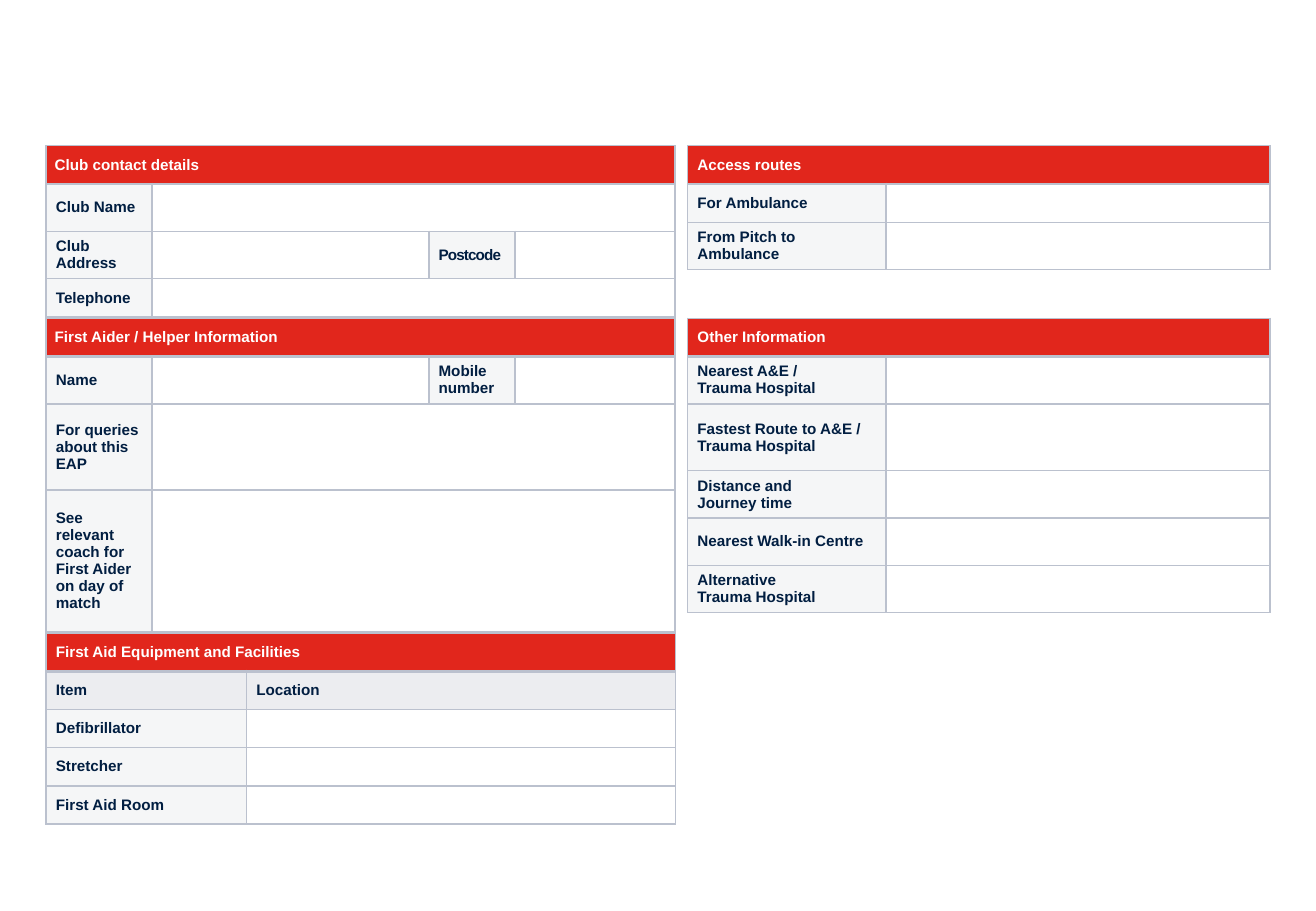
from dataclasses import dataclass

from lxml import etree
from pptx import Presentation
from pptx.dml.color import RGBColor
from pptx.enum.text import MSO_ANCHOR
from pptx.oxml.ns import qn
from pptx.util import Emu, Pt

PX = 4572  # 200 px to the inch
MIDDLE = MSO_ANCHOR.MIDDLE
FONT = "Arial"
FONT_SIZE = 9
OPACITY = 70
COLOURS = {
    "heading": "E1261C",
    "subheading": "E4E6EB",
    "label": "F1F3F5",
    "entry": "FFFFFF",
    "border": "BBC1CE",
    "heading_text": "FFFFFF",
    "text": "011E41",
}
HEADING_H, LINE_H, DOUBLE_H = 63, 63, 78
LEFT_X, RIGHT_X = 76, 1132
TOP_Y, MIDDLE_Y, BOTTOM_Y = 240, 524, 1042
CONTACT_COLUMNS = (174, 456, 142, 263)
EQUIPMENT_COLUMNS = (330, 706)
ROUTE_COLUMNS = (326, 632)


@dataclass(frozen=True)
class Field:
    """A row of labels, each followed by an entry cell; the last cell fills the row."""
    height: int
    labels: tuple[str, ...]
    is_subheading: bool = False
    tight_label: str = ""


@dataclass(frozen=True)
class Section:
    heading: str
    left: int
    top: int
    columns: tuple[int, ...]
    fields: tuple[Field, ...]
    heading_inset: tuple[int, int] = (16, 8)


SECTIONS = (
    Section("Club contact details", LEFT_X, TOP_Y, CONTACT_COLUMNS, (
        Field(DOUBLE_H, ("Club Name",)),
        Field(DOUBLE_H, ("Club Address", "Postcode"), tight_label="Postcode"),
        Field(LINE_H, ("Telephone",)),
    ), (14, 6)),
    Section("First Aider / Helper Information", LEFT_X, MIDDLE_Y, CONTACT_COLUMNS, (
        Field(DOUBLE_H, ("Name", "Mobile number")),
        Field(142, ("For queries about this EAP",)),
        Field(234, ("See relevant coach for First Aider on day of match",)),
    ), (14, 6)),
    Section("First Aid Equipment and Facilities", LEFT_X, BOTTOM_Y, EQUIPMENT_COLUMNS, (
        Field(LINE_H, ("Item", "Location"), is_subheading=True),
        Field(LINE_H, ("Defibrillator",)),
        Field(LINE_H, ("Stretcher",)),
        Field(LINE_H, ("First Aid Room",)),
    )),
    Section("Access routes", RIGHT_X, TOP_Y, ROUTE_COLUMNS, (
        Field(LINE_H, ("For Ambulance",)),
        Field(DOUBLE_H, ("From Pitch to Ambulance",)),
    )),
    Section("Other Information", RIGHT_X, MIDDLE_Y, ROUTE_COLUMNS, (
        Field(DOUBLE_H, ("Nearest A&E /\vTrauma Hospital",)),
        Field(110, ("Fastest Route to A&E /\nTrauma Hospital",)),
        Field(DOUBLE_H, ("Distance and\vJourney time",)),
        Field(DOUBLE_H, ("Nearest Walk-in Centre",)),
        Field(DOUBLE_H, ("Alternative\nTrauma Hospital",)),
    )),
)


def px(length: int) -> Emu:
    return Emu(length * PX)


def add_borders(cell, bottom_width: int = 1) -> None:
    properties = cell._tc.get_or_add_tcPr()
    for side in "LRTB":
        width = bottom_width if side == "B" else 1
        line = etree.SubElement(properties, qn(f"a:ln{side}"), w=str(Pt(width)))
        fill = etree.SubElement(line, qn("a:solidFill"))
        etree.SubElement(fill, qn("a:srgbClr"), val=COLOURS["border"])


def fill_cell(cell, role: str) -> None:
    cell.fill.solid()
    cell.fill.fore_color.rgb = RGBColor.from_string(COLOURS[role])
    if role != "heading":
        colour = cell._tc.tcPr.find(qn("a:solidFill")).find(qn("a:srgbClr"))
        etree.SubElement(colour, qn("a:alpha"), val=str(OPACITY * 1000))


def write_cell(cell, text: str, role: str, inset: tuple[int, int] = (16, 8)) -> None:
    fill_cell(cell, role)
    cell.vertical_anchor = MIDDLE
    cell.margin_left = cell.margin_right = px(inset[0])
    cell.margin_top = cell.margin_bottom = px(inset[1])
    cell.text_frame.text = text
    colour = COLOURS["heading_text" if role == "heading" else "text"]
    for paragraph in cell.text_frame.paragraphs:
        paragraph.font.name = FONT
        paragraph.font.size = Pt(FONT_SIZE)
        paragraph.font.bold = True
        paragraph.font.color.rgb = RGBColor.from_string(colour)
        if not text:
            # An empty line takes its height from its end mark.
            etree.SubElement(paragraph._p, qn("a:endParaRPr"), sz=str(FONT_SIZE * 100))


def write_field(table, row: int, field: Field) -> None:
    last = len(table.columns) - 1
    if field.is_subheading:
        for column, label in enumerate(field.labels):
            write_cell(table.cell(row, column), label, "subheading")
        return
    for index, label in enumerate(field.labels):
        column = 2 * index
        label_cell, entry = table.cell(row, column), table.cell(row, column + 1)
        write_cell(label_cell, label, "label")
        if label == field.tight_label:
            run = label_cell.text_frame.paragraphs[0].runs[0]
            run._r.get_or_add_rPr().set("spc", "-50")
        if label == field.labels[-1] and column + 1 < last:
            entry.merge(table.cell(row, last))
        write_cell(entry, "", "entry")


def add_section(slide, section: Section) -> None:
    heights = [HEADING_H] + [field.height for field in section.fields]
    table = slide.shapes.add_table(
        len(heights), len(section.columns), px(section.left), px(section.top),
        px(sum(section.columns)), px(sum(heights))).table
    table.first_row = table.horz_banding = False
    for column, width in zip(table.columns, section.columns):
        column.width = px(width)
    for index, (row, height) in enumerate(zip(table.rows, heights)):
        row.height = px(height)
        for cell in row.cells:
            add_borders(cell, 2 if index == 0 else 1)
    heading = table.cell(0, 0)
    heading.merge(table.cell(0, len(section.columns) - 1))
    write_cell(heading, section.heading, "heading", section.heading_inset)
    for row, field in enumerate(section.fields, start=1):
        write_field(table, row, field)


def main() -> None:
    presentation = Presentation()
    presentation.slide_width, presentation.slide_height = px(2166), px(1500)
    slide = presentation.slides.add_slide(presentation.slide_layouts[6])
    for section in SECTIONS:
        add_section(slide, section)
    presentation.save("out.pptx")


if __name__ == "__main__":
    main()
